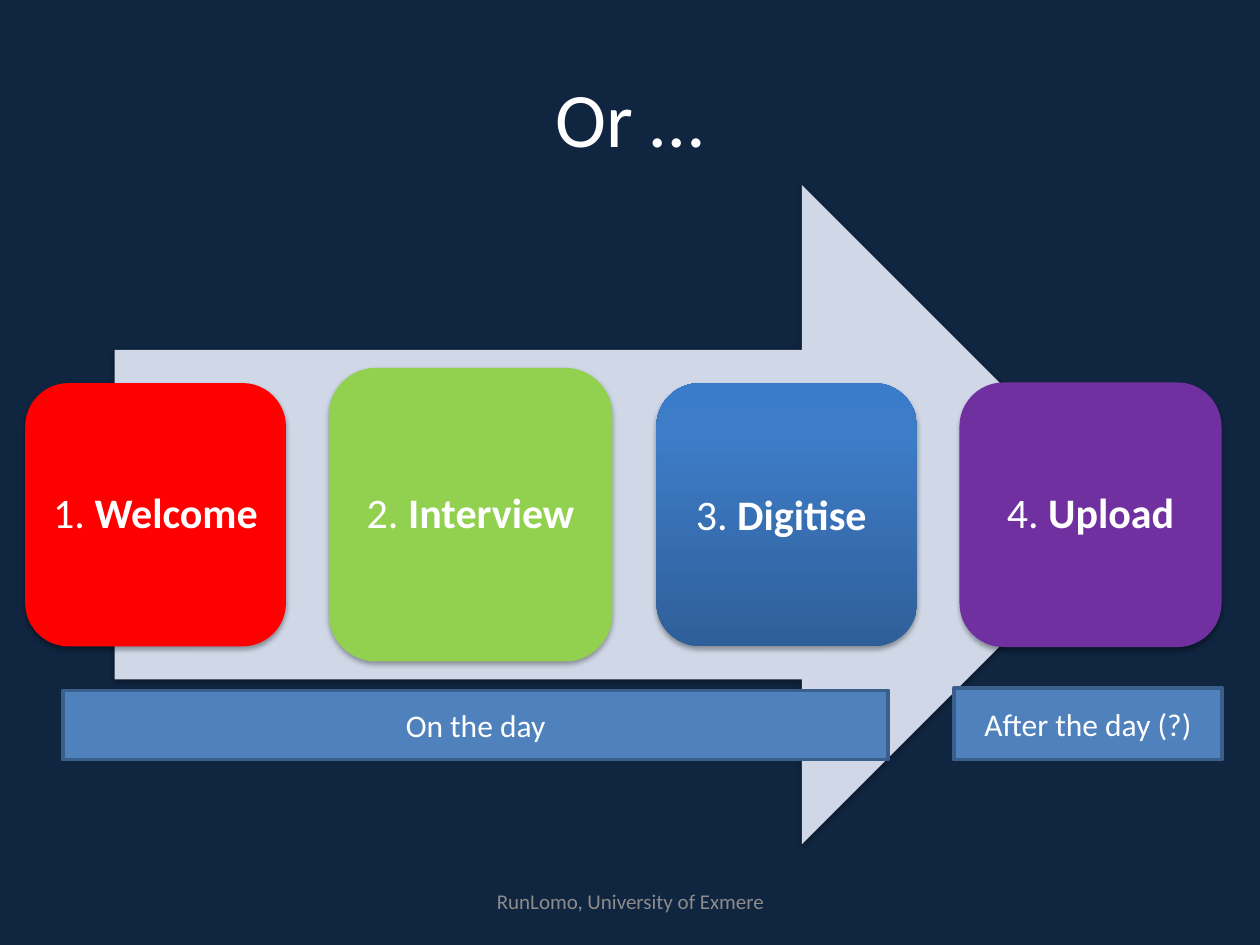
"""Build a slide that shows four event steps along a wide arrow."""
from copy import deepcopy
from dataclasses import dataclass

from lxml import etree
from pptx import Presentation
from pptx.dml.color import RGBColor
from pptx.enum.shapes import MSO_SHAPE
from pptx.enum.text import MSO_ANCHOR, PP_ALIGN
from pptx.oxml.ns import qn
from pptx.shapes.autoshape import Shape
from pptx.slide import Slide
from pptx.util import Inches, Pt

RECTANGLE = MSO_SHAPE.RECTANGLE
ROUNDED = MSO_SHAPE.ROUNDED_RECTANGLE
ARROW = MSO_SHAPE.RIGHT_ARROW
MIDDLE = MSO_ANCHOR.MIDDLE
CENTER = PP_ALIGN.CENTER

NAVY = RGBColor(0x10, 0x25, 0x3F)
WHITE = RGBColor(0xFF, 0xFF, 0xFF)
GREY = RGBColor(0x8C, 0x8C, 0x8C)
PALE = RGBColor(0xD0, 0xD8, 0xE8)
RED = RGBColor(0xFF, 0x00, 0x00)
GREEN = RGBColor(0x92, 0xD0, 0x50)
PURPLE = RGBColor(0x70, 0x30, 0xA0)
BLUE = RGBColor(0x4F, 0x81, 0xBD)
BLUE_EDGE = RGBColor(0x3A, 0x5F, 0x8C)
BLUE_DARK = RGBColor(0x2F, 0x5F, 0x99)
BLUE_MID = RGBColor(0x3D, 0x7C, 0xC7)
BLUE_LIGHT = RGBColor(0x3A, 0x7C, 0xCB)
BLUE_BLEND = ((0, BLUE_DARK), (0.8, BLUE_MID), (1, BLUE_LIGHT))
FONT = "Calibri"
STEP_CENTER = 4.085


@dataclass(frozen=True)
class Area:
    left: float
    top: float
    width: float
    height: float

    def lengths(self) -> tuple[int, ...]:
        return tuple(Inches(n) for n in (self.left, self.top, self.width, self.height))


@dataclass(frozen=True)
class Step:
    name: str
    left: float
    fill: RGBColor | None
    width: float = 2.07
    height: float = 2.09
    line: RGBColor | None = None
    tail_size: float | None = None


@dataclass(frozen=True)
class Period:
    name: str
    area: Area


STEPS = (
    Step("Welcome", 0.2, RED),
    Step("Interview", 2.61, GREEN, width=2.25, height=2.33),
    Step("Digitise", 5.21, None, tail_size=28),
    Step("Upload", 7.62, PURPLE, line=PURPLE),
)
PERIODS = (
    Period("On the day", Area(0.5, 5.48, 6.55, 0.55)),
    Period("After the day (?)", Area(7.57, 5.46, 2.13, 0.57)),
)


def write(box: Shape, *texts: str, size: float, color: RGBColor = WHITE,
          bold_from: int | None = None, tail_size: float | None = None,
          line_spacing: float | None = None) -> None:
    frame = box.text_frame
    frame.word_wrap = True
    frame.vertical_anchor = MIDDLE
    para = frame.paragraphs[0]
    para.alignment = CENTER
    para.line_spacing = line_spacing
    for index, text in enumerate(texts):
        span = para.add_run()
        span.text = text
        span.font.name = FONT
        span.font.size = Pt(size)
        span.font.color.rgb = color
        span.font.bold = bold_from is not None and index >= bold_from
    if tail_size:
        span = para.add_run()
        span.text = " "
        span.font.size = Pt(tail_size)


def add_block(page: Slide, kind: MSO_SHAPE, area: Area, fill: RGBColor | None,
              line: RGBColor | None = None, line_width: float = 0.75) -> Shape:
    block = page.shapes.add_shape(kind, *area.lengths())
    block.shadow.inherit = False
    if fill is None:
        blend(block)
    else:
        block.fill.solid()
        block.fill.fore_color.rgb = fill
    if line is None:
        block.line.fill.background()
    else:
        block.line.color.rgb = line
        block.line.width = Pt(line_width)
    return block


def blend(block: Shape) -> None:
    block.fill.gradient()
    block.fill.gradient_angle = 90
    stops = block.element.spPr.find(".//" + qn("a:gsLst"))
    stops.append(deepcopy(stops[0]))
    for stop, (position, color) in zip(block.fill.gradient_stops, BLUE_BLEND):
        stop.position = position
        stop.color.rgb = color


def cast_shadow(block: Shape) -> None:
    effects = block.element.spPr.find(qn("a:effectLst"))
    shadow = etree.SubElement(effects, qn("a:outerShdw"), blurRad=str(Pt(3.1)),
                              dist=str(Pt(1.8)), dir="5400000", rotWithShape="0")
    color = etree.SubElement(shadow, qn("a:srgbClr"), val="000000")
    etree.SubElement(color, qn("a:alpha"), val="35000")


def add_label(page: Slide, text: str, area: Area, size: float, color: RGBColor) -> None:
    write(page.shapes.add_textbox(*area.lengths()), text, size=size, color=color)


def add_step(page: Slide, number: int, step: Step) -> None:
    area = Area(step.left, STEP_CENTER - step.height / 2, step.width, step.height)
    block = add_block(page, ROUNDED, area, step.fill, step.line)
    cast_shadow(block)
    write(block, f"{number}. ", step.name, size=24, bold_from=1,
          tail_size=step.tail_size, line_spacing=0.9)


def add_period(page: Slide, period: Period) -> None:
    block = add_block(page, RECTANGLE, period.area, BLUE, BLUE_EDGE, line_width=2)
    write(block, period.name, size=18)


def main() -> None:
    deck = Presentation()
    deck.slide_width = Inches(10)
    deck.slide_height = Inches(7.5)
    page = deck.slides.add_slide(deck.slide_layouts[6])
    page.background.fill.solid()
    page.background.fill.fore_color.rgb = NAVY

    add_label(page, "Or …", Area(0.5, 0.3, 9, 1.25), 44, WHITE)
    cast_shadow(add_block(page, ARROW, Area(0.91, 1.47, 8.07, 5.23), PALE))
    for number, step in enumerate(STEPS, start=1):
        add_step(page, number, step)
    add_label(page, "RunLomo, University of Exmere", Area(3.42, 6.95, 3.17, 0.4), 12, GREY)
    for period in PERIODS:
        add_period(page, period)
    deck.save("out.pptx")


if __name__ == "__main__":
    main()
